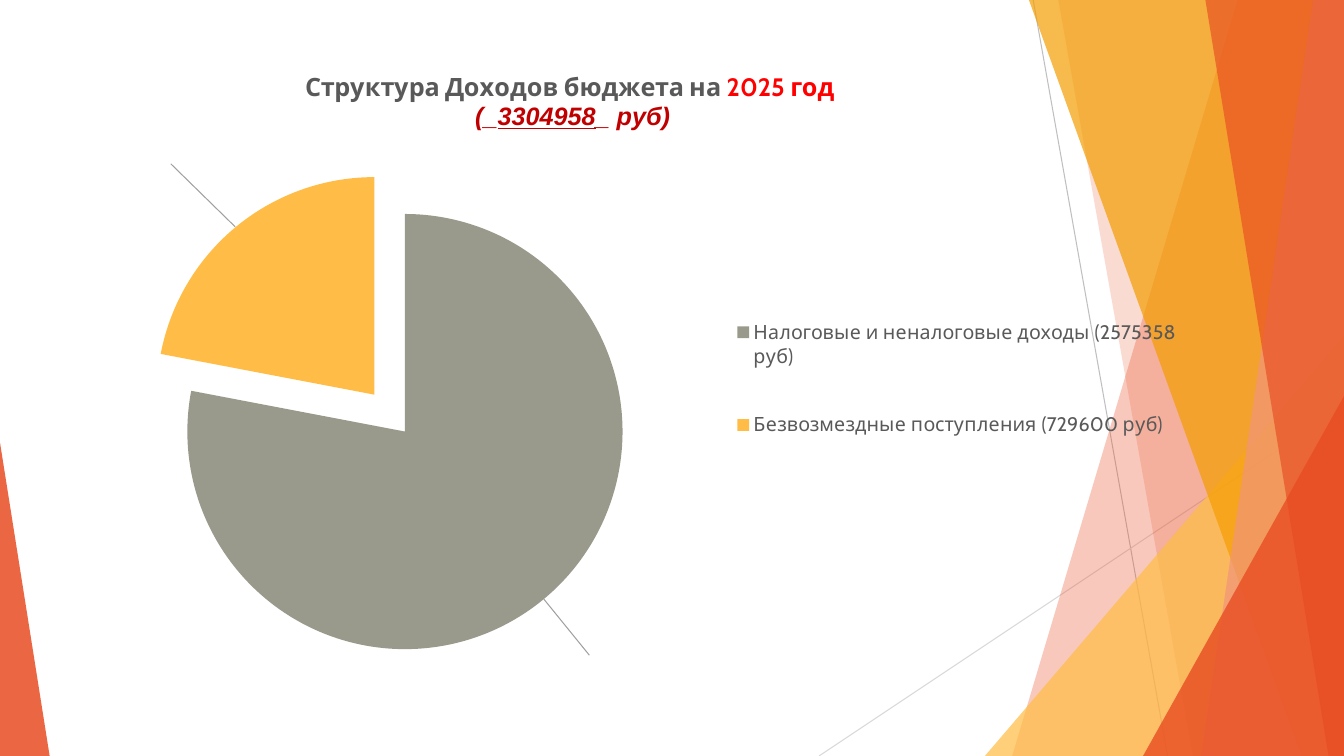
from lxml import etree
from pptx import Presentation
from pptx.chart.data import CategoryChartData
from pptx.dml.color import RGBColor
from pptx.enum.chart import XL_CHART_TYPE, XL_LEGEND_POSITION
from pptx.enum.shapes import MSO_CONNECTOR, MSO_SHAPE
from pptx.oxml import parse_xml
from pptx.oxml.ns import nsdecls, qn
from pptx.util import Pt

PIE = XL_CHART_TYPE.PIE
RIGHT = XL_LEGEND_POSITION.RIGHT
LINE = MSO_CONNECTOR.STRAIGHT
TRIANGLE = MSO_SHAPE.ISOSCELES_TRIANGLE

WIDE, HIGH = 960, 540
THEME = {
    "font": "Cabin", "alt": "Arial", "title": 18, "legend": 14, "base": 10,
    "text": "595959", "red": "FF0000", "dark": "C00000",
    "orange": "E84C22", "amber": "FFBD47", "gold": "F49D00",
    "salmon": "F1947A", "olive": "9A9A8C",
    "thin": "BFBFBF", "pale": "D9D9D9", "lead": "A0A0A0",
}

# Title lines, each a list of (text, format)
PLAIN = {"bold": True, "name": THEME["font"], "color": "text"}
SUM = {"bold": True, "italic": True, "name": THEME["alt"], "color": "dark"}
TITLE = [
    [("Структура Доходов бюджета на ", PLAIN),
     ("2025 год ", {**PLAIN, "color": "red"})],
    [("(_", SUM), ("3304958", {**SUM, "underline": True}), ("_ руб)", SUM)],
]
SHARES = [
    ("Налоговые и неналоговые доходы (2575358 руб)", 78, "olive"),
    ("Безвозмездные поступления (729600 руб)", 22, "amber"),
]

# Lines: x1, y1, x2, y2, colour, width
RAYS = [(738, 0, 834, 540, "thin", 0.75), (960, 290, 585, 540, "pale", 0.75)]
LEADERS = [(122, 117, 168, 162, "lead", 0.75),
           (388.5, 428, 421, 468, "lead", 0.75)]

# Strips reach the right edge: top x, bottom x, colour, opacity
# Triangles: left, top, width, height, apex, colour, opacity
FACETS = [
    (884, 723, "orange", 30),
    (756, 852, "orange", 20),
    (703.5, 240, 256.5, 300, 1, "amber", 72),
    (735, 930, "gold", 70),
    (938, 858, "salmon", 70),
    (861, 949, "orange", 65),
    (816.5, 283, 143.5, 257, 1, "orange", 80),
    (0, 316, 35.5, 224, 0, "orange", 85),
]

CHART = (13, 34, 870, 474)
PLOT = (0.024, 0.187, 0.562, 0.728)
KEY = (0.578, 0.344, 0.385, 0.31)
HEAD = (0.233, 0.029)
BURST = 11


def tint(name):
    return RGBColor.from_string(THEME[name])


def style(font, form):
    for key, value in form.items():
        if key == "color":
            font.color.rgb = tint(value)
        else:
            setattr(font, key, value)


def paint(shape, color, alpha):
    shape.shadow.inherit = False
    shape.line.fill.background()
    shape.fill.solid()
    shape.fill.fore_color.rgb = tint(color)
    node = shape.fill._xPr.find(".//" + qn("a:srgbClr"))
    etree.SubElement(node, qn("a:alpha")).set("val", str(alpha * 1000))


def draw_facet(shapes, facet):
    *place, color, alpha = facet
    if len(place) == 2:
        top, low = place
        pen = shapes.build_freeform(Pt(top), 0)
        pen.add_line_segments([(Pt(WIDE), 0), (Pt(WIDE), Pt(HIGH)),
                               (Pt(low), Pt(HIGH))], close=True)
        shape = pen.convert_to_shape()
    else:
        *box, apex = place
        shape = shapes.add_shape(TRIANGLE, *map(Pt, box))
        shape.adjustments[0] = apex
    paint(shape, color, alpha)


def draw_line(shapes, ray):
    *ends, color, width = ray
    line = shapes.add_connector(LINE, *map(Pt, ends))
    line.line.color.rgb = tint(color)
    line.line.width = Pt(width)
    etree.SubElement(line._element.spPr, qn("a:effectLst"))


def layout(values, inner=False):
    """Return a manual layout given as fractions of the chart."""
    names = "xywh"[:len(values)]
    body = '<c:layoutTarget val="inner"/>' if inner else ""
    body += "".join(f'<c:{n}Mode val="edge"/>' for n in "xy")
    body += "".join(f'<c:{n} val="{v}"/>' for n, v in zip(names, values))
    return parse_xml(f'<c:layout {nsdecls("c")}><c:manualLayout>{body}'
                     '</c:manualLayout></c:layout>')


def set_layout(node, after, values, inner=False):
    for old in node.findall(qn("c:layout")):
        node.remove(old)
    fresh = layout(values, inner)
    if after is None:
        node.insert(0, fresh)
    else:
        node.find(qn(after)).addnext(fresh)


def add_title(chart):
    frame = chart.chart_title.text_frame
    for row, parts in enumerate(TITLE):
        para = frame.add_paragraph() if row else frame.paragraphs[0]
        for text, form in parts:
            run = para.add_run()
            run.text = text
            style(run.font, {"size": Pt(THEME["title"]), **form})
    chart.chart_title.include_in_layout = False
    set_layout(chart.chart_title._element, "c:tx", HEAD)


def add_pie(shapes):
    data = CategoryChartData()
    data.categories = [name for name, _, _ in SHARES]
    data.add_series("Series 1", [value for _, value, _ in SHARES])
    chart = shapes.add_chart(PIE, *map(Pt, CHART), data).chart
    style(chart.font, {"name": THEME["font"], "size": Pt(THEME["base"])})
    add_title(chart)

    plot = chart.plots[0]
    plot.vary_by_categories = True
    series = plot.series[0]
    for i, (_, _, color) in enumerate(SHARES):
        form = series.points[i].format
        form.fill.solid()
        form.fill.fore_color.rgb = tint(color)
        form.line.fill.background()
    burst = parse_xml(f'<c:explosion {nsdecls("c")} val="{BURST}"/>')
    series._element.find(qn("c:dPt")).addprevious(burst)
    set_layout(chart._chartSpace.chart.plotArea, None, PLOT, True)

    chart.has_legend = True
    legend = chart.legend
    legend.position = RIGHT
    legend.include_in_layout = False
    style(legend.font, {"name": THEME["font"], "size": Pt(THEME["legend"]),
                        "color": "text"})
    set_layout(legend._element, "c:legendPos", KEY)


def main():
    deck = Presentation()
    deck.slide_width, deck.slide_height = Pt(WIDE), Pt(HIGH)
    shapes = deck.slides.add_slide(deck.slide_layouts[6]).shapes
    for ray in RAYS:
        draw_line(shapes, ray)
    for facet in FACETS:
        draw_facet(shapes, facet)
    add_pie(shapes)
    for ray in LEADERS:
        draw_line(shapes, ray)
    deck.save("out.pptx")


if __name__ == "__main__":
    main()
